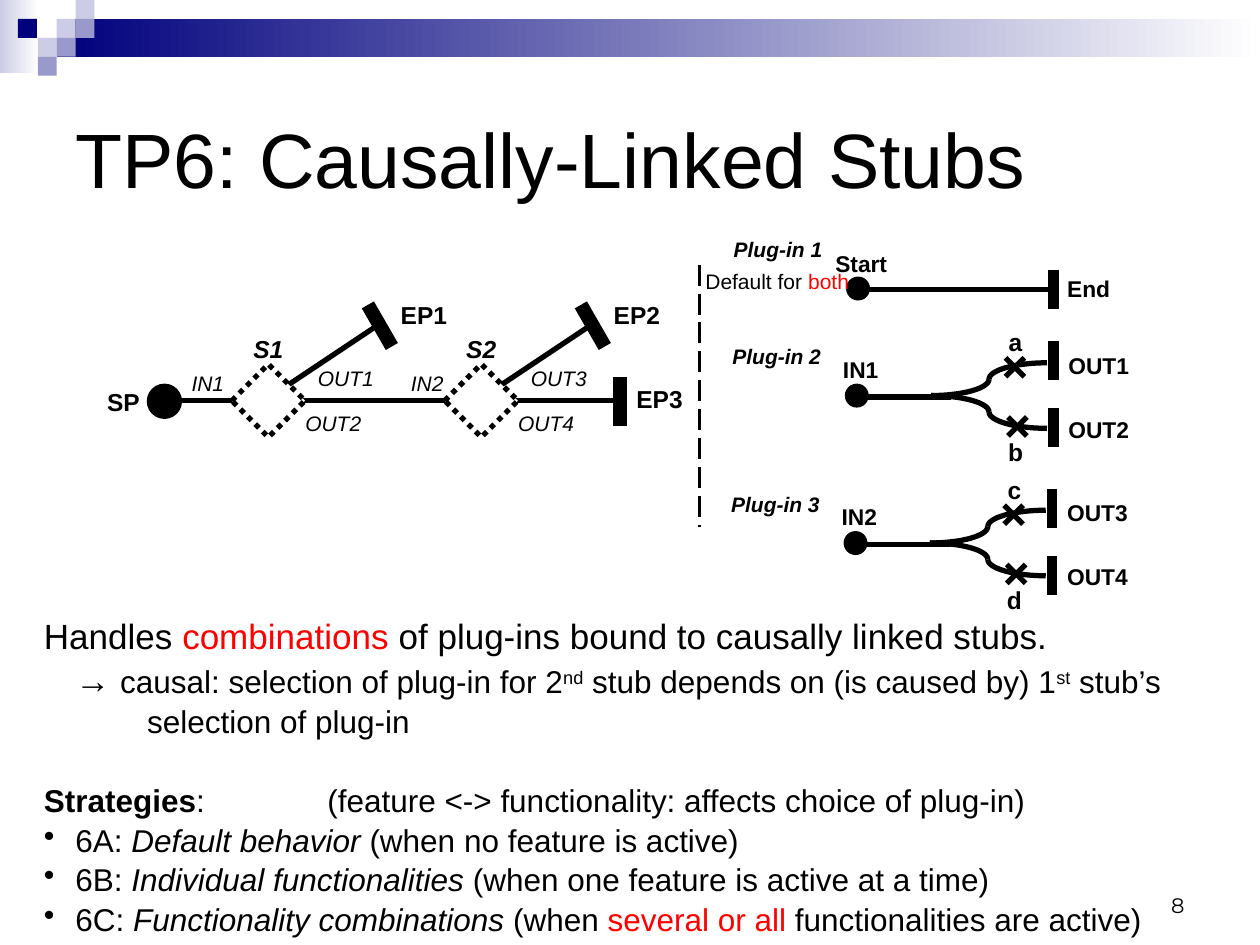
from dataclasses import dataclass, field
from typing import NamedTuple

from lxml import etree
from pptx import Presentation
from pptx.dml.color import RGBColor
from pptx.enum import dml, shapes, text
from pptx.oxml import ns
from pptx.util import Inches, Pt

BLACK = RGBColor(0x00, 0x00, 0x00)
WHITE = RGBColor(0xFF, 0xFF, 0xFF)
RED = RGBColor(0xFF, 0x00, 0x00)
NAVY = RGBColor(0x00, 0x00, 0x7D)
LAVENDER = RGBColor(0xCC, 0xCC, 0xE6)
PERIWINKLE = RGBColor(0x99, 0x99, 0xCC)

NAME = dict(size=Pt(14), bold=True)
STUB_NAME = dict(NAME, italic=True)
PORT = dict(size=Pt(13), bold=True)
BINDING = dict(size=Pt(12), italic=True)
PLUG_IN_NAME = dict(BINDING, bold=True)
LABEL_HEIGHTS = {Pt(14): 0.33, Pt(13): 0.32, Pt(12): 0.3}
STUB_GAP = 1.69
CURVE_STEPS = 16


class Span(NamedTuple):
    words: str
    style: dict = {}
    color: RGBColor = BLACK
    raised: bool = False


@dataclass
class Line:
    spans: list[Span]
    bullet: bool = False
    style: dict = field(default_factory=lambda: dict(size=Pt(18)))


class Stub(NamedTuple):
    name: str
    entry: str
    upper_exit: str
    lower_exit: str
    end_point: str


class ForkPlugIn(NamedTuple):
    name: str
    start: str
    ends: tuple
    steps: tuple
    dx: float
    dy: float


def set_values(target, values: dict) -> None:
    for key, value in values.items():
        setattr(target, key, value)


def add_spans(paragraph, spans: list[Span], base: dict) -> None:
    for span in spans:
        run = paragraph.add_run()
        run.text = span.words
        set_values(run.font, {"name": "Arial", **base, **span.style})
        run.font.color.rgb = span.color
        if span.raised:
            run._r.get_or_add_rPr().set("baseline", "30000")


def add_box(slide, left, top, width, height, wrap=True, anchor=text.MSO_ANCHOR.TOP):
    frame = slide.shapes.add_textbox(*map(Inches, (left, top, width, height))).text_frame
    set_values(frame, dict(word_wrap=wrap, vertical_anchor=anchor))
    return frame


def add_label(slide, words: str, left: float, top: float, width: float, style: dict) -> None:
    frame = add_box(slide, left, top, width, LABEL_HEIGHTS[style["size"]], wrap=False)
    frame.paragraphs[0].alignment = text.PP_ALIGN.CENTER
    add_spans(frame.paragraphs[0], [Span(words)], style)


def add_path(slide, x1, y1, x2, y2, weight: float = 3, dash=None) -> None:
    path = slide.shapes.add_connector(
        shapes.MSO_CONNECTOR.STRAIGHT, *map(Inches, (x1, y1, x2, y2)))
    path.line.color.rgb = BLACK
    set_values(path.line, dict(width=Pt(weight), dash_style=dash))
    etree.SubElement(path._element.spPr, ns.qn("a:effectLst"))


def add_shape(slide, kind, left, top, width, height, fill: RGBColor):
    shape = slide.shapes.add_shape(kind, *map(Inches, (left, top, width, height)))
    shape.shadow.inherit = False
    shape.fill.solid()
    shape.fill.fore_color.rgb = fill
    shape.line.fill.background()
    return shape


def add_start(slide, left: float, top: float, size: float) -> None:
    dot = add_shape(slide, shapes.MSO_SHAPE.OVAL, left, top, size, size, BLACK)
    dot.line.color.rgb = BLACK
    dot.line.width = Pt(0.75)


def add_curve(slide, x1: float, y1: float, x2: float, y2: float) -> None:
    mid_x, mid_y = x1 + (x2 - x1) * 0.55, y2 - (y2 - y1) * 0.55
    points = []
    for step in range(CURVE_STEPS + 1):
        t = step / CURVE_STEPS
        weights = (1 - t) ** 3, 3 * t * (1 - t) ** 2, 3 * t * t * (1 - t), t ** 3
        points.append(tuple(
            Inches(sum(w * c for w, c in zip(weights, controls)))
            for controls in ((x1, mid_x, x2, x2), (y1, y1, mid_y, y2))))
    builder = slide.shapes.build_freeform(*points[0])
    builder.add_line_segments(points[1:], close=False)
    curve = builder.convert_to_shape()
    curve.shadow.inherit = False
    curve.fill.background()
    curve.line.color.rgb = BLACK
    curve.line.width = Pt(3)


def draw_header(slide) -> None:
    bars = [(0, 0, 0.31, 0.58, LAVENDER), (0.45, 0.15, 9.55, 0.3, NAVY)]
    for left, top, width, height, color in bars:
        bar = add_shape(slide, shapes.MSO_SHAPE.RECTANGLE, left, top, width, height, color)
        bar.fill.gradient()
        bar.fill.gradient_angle = 0
        for stop, shade in zip(bar.fill.gradient_stops, (color, WHITE)):
            stop.color.rgb = shade
    tiles = [(3, 1, LAVENDER), (4, 0, LAVENDER), (4, 1, PERIWINKLE), (2, 2, LAVENDER),
             (0.95, 1, NAVY), (3, 2, PERIWINKLE), (2, 3, PERIWINKLE)]
    for column, row, color in tiles:
        add_shape(slide, shapes.MSO_SHAPE.RECTANGLE,
                  column * 0.15, row * 0.15, 0.15, 0.15, color)


def draw_stub(slide, stub: Stub, dx: float) -> None:
    add_path(slide, 2.92 + dx, 2.42, 3.11 + dx, 2.75, 8)
    add_path(slide, 2.25 + dx, 3.08, 3 + dx, 2.58)
    diamond = add_shape(slide, shapes.MSO_SHAPE.DIAMOND, 1.84 + dx, 2.89, 0.58, 0.58, WHITE)
    diamond.line.color.rgb = BLACK
    set_values(diamond.line, dict(width=Pt(3), dash_style=dml.MSO_LINE.ROUND_DOT))
    add_label(slide, stub.name, 1.91 + dx, 2.6, 0.44, STUB_NAME)
    add_label(slide, stub.entry, 1.42 + dx * 1.03, 2.89, 0.46, BINDING)
    add_label(slide, stub.upper_exit, 2.42 + dx, 2.85, 0.65, BINDING)
    add_label(slide, stub.lower_exit, 2.32 + dx, 3.21, 0.65, BINDING)
    add_label(slide, stub.end_point, 3.08 + dx, 2.33, 0.57, NAME)


def draw_root_map(slide) -> None:
    add_start(slide, 1.17, 3.05, 0.27)
    add_path(slide, 1.33, 3.18, 4.92, 3.18)
    add_path(slide, 4.92, 2.99, 4.92, 3.38, 8)
    add_label(slide, "SP", 0.75, 3.02, 0.46, NAME)
    add_label(slide, "EP3", 4.95, 3, 0.57, NAME)
    stubs = [Stub("S1", "IN1", "OUT1", "OUT2", "EP1"),
             Stub("S2", "IN2", "OUT3", "OUT4", "EP2")]
    for position, stub in enumerate(stubs):
        draw_stub(slide, stub, position * STUB_GAP)
    add_path(slide, 5.55, 2.1, 5.55, 4.18, 1.5, dml.MSO_LINE.LONG_DASH)


def draw_default_plug_in(slide) -> None:
    add_start(slide, 6.72, 2.2, 0.18)
    add_path(slide, 6.88, 2.3, 8.33, 2.3)
    add_path(slide, 8.36, 2.14, 8.36, 2.45, 6)
    add_label(slide, "Start", 6.53, 1.93, 0.61, PORT)
    add_label(slide, "End", 8.37, 2.13, 0.54, PORT)
    add_label(slide, "Plug-in 1", 5.72, 1.83, 0.91, PLUG_IN_NAME)
    note = add_box(slide, 5.5, 2.08, 1.35, 0.3, wrap=False)
    add_spans(note.paragraphs[0], [Span("Default for "), Span("both", color=RED)],
              dict(size=Pt(12)))


def draw_fork_plug_in(slide, plug_in: ForkPlugIn) -> None:
    dx, dy = plug_in.dx, plug_in.dy
    add_start(slide, 6.71 + dx, 3.05 + dy, 0.18)
    add_path(slide, 6.88 + dx, 3.15 + dy, 7.55 + dx, 3.15 + dy)
    add_label(slide, plug_in.name, 5.71 + dx, 2.68 + dy, 0.91, PLUG_IN_NAME)
    add_label(slide, plug_in.start, 6.59 + dx, 2.77 + dy, 0.48, PORT)
    branches = [(-0.13, 2.71, 2.84, 2.74, 7.98, 2.55), (0.13, 3.24, 3.31, 3.25, 8, 3.42)]
    for end, step, branch in zip(plug_in.ends, plug_in.steps, branches):
        rise, bar_top, cross_top, end_top, cross_left, step_top = branch
        fork_y, left, top = 3.14 + dy, cross_left + dx, cross_top + dy
        add_curve(slide, 7.39 + dx, fork_y, 7.85 + dx, fork_y + rise)
        add_curve(slide, 8.31 + dx, fork_y + 2 * rise, 7.85 + dx, fork_y + rise)
        add_path(slide, left, top, left + 0.15, top + 0.15)
        add_path(slide, left, top + 0.15, left + 0.15, top)
        add_path(slide, 8.36 + dx, bar_top + dy, 8.36 + dx, bar_top + 0.31 + dy, 6)
        add_label(slide, end, 8.38 + dx, end_top + dy, 0.68, PORT)
        add_label(slide, step, 7.9 + dx, step_top + dy, 0.32, NAME)


def draw_explanation(slide) -> None:
    large, bold, italic = dict(size=Pt(20)), dict(bold=True), dict(italic=True)
    lines = [
        Line([Span("Handles "), Span("combinations ", color=RED),
              Span("of plug-ins bound to causally linked stubs.")], style=large),
        Line([Span("\t→ ", large), Span("causal: selection of plug-in for 2"),
              Span("nd", raised=True), Span(" stub depends on (is caused by) 1"),
              Span("st", raised=True), Span(" stub’s")]),
        Line([Span("\t\t selection of plug-in")]),
        Line([]),
        Line([Span("Strategies", bold),
              Span(":\t\t(feature <-> functionality: affects choice of plug-in)")]),
        Line([Span("6A: "), Span("Default behavior", italic),
              Span(" (when no feature is active)")], bullet=True),
        Line([Span("6B: "), Span("Individual functionalities", italic),
              Span(" (when one feature is active at a time)")], bullet=True),
        Line([Span("6C: "), Span("Functionality combinations", italic), Span(" (when "),
              Span("several or all ", color=RED), Span("functionalities are active)")],
             bullet=True),
    ]
    frame = add_box(slide, 0.25, 4.83, 9.33, 2.59)
    for position, line in enumerate(lines):
        paragraph = frame.add_paragraph() if position else frame.paragraphs[0]
        set_values(paragraph, dict(space_before=Pt(1)))
        set_values(paragraph.font, line.style)
        add_spans(paragraph, line.spans, line.style)
        properties = paragraph._p.get_or_add_pPr()
        for key, indent in dict(marL=0.25, indent=-0.25).items():
            properties.set(key, str(Inches(indent)))
        if line.bullet:
            bullet = etree.Element(ns.qn("a:buChar"), char="•")
            properties.find(ns.qn("a:spcBef")).addnext(bullet)


def main() -> None:
    deck = Presentation()
    set_values(deck, dict(slide_width=Inches(10), slide_height=Inches(7.5)))
    slide = deck.slides.add_slide(deck.slide_layouts[6])
    draw_header(slide)
    number = add_box(slide, 7.17, 6.83, 2.33, 0.5, anchor=text.MSO_ANCHOR.BOTTOM)
    number.paragraphs[0].alignment = text.PP_ALIGN.RIGHT
    add_spans(number.paragraphs[0], [Span("8")], dict(name="Montserrat", size=Pt(12)))
    title = add_box(slide, 0.5, 0.5, 9, 1.5, anchor=text.MSO_ANCHOR.MIDDLE)
    add_spans(title.paragraphs[0], [Span("TP6: Causally-Linked Stubs")], dict(size=Pt(44)))
    draw_explanation(slide)
    draw_root_map(slide)
    draw_default_plug_in(slide)
    for plug_in in (
        ForkPlugIn("Plug-in 2", "IN1", ("OUT1", "OUT2"), ("a", "b"), 0, 0),
        ForkPlugIn("Plug-in 3", "IN2", ("OUT3", "OUT4"), ("c", "d"), -0.01, 1.17),
    ):
        draw_fork_plug_in(slide, plug_in)
    deck.save("out.pptx")


if __name__ == "__main__":
    main()
